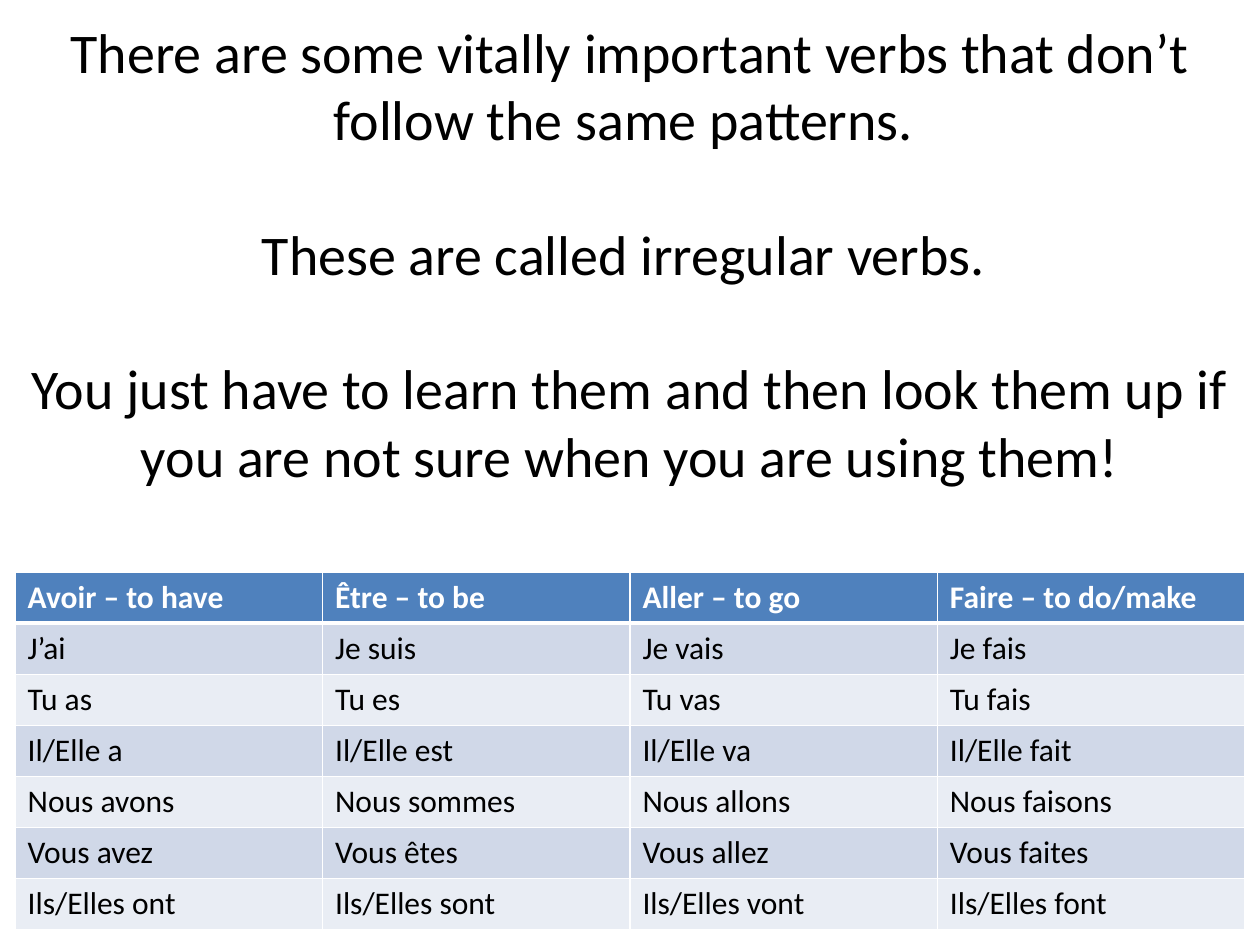
import pptx
import pptx.util
import pptx.dml.color
import pptx.enum.text
import pptx.oxml
import pptx.oxml.ns

WIDE, HIGH = 10, 7.5
LINE = 38.4
LINES = [
    "There are some vitally important verbs that don’t follow the same patterns. ",
    "These are called irregular verbs. ",
    "You just have to learn them and then look them up if you are not sure when you are using them!",
]
VERBS = {
    "Avoir – to have": ["J’ai", "Tu as", "Il/Elle a", "Nous avons", "Vous avez", "Ils/Elles ont"],
    "Être – to be": ["Je suis", "Tu es", "Il/Elle est", "Nous sommes", "Vous êtes", "Ils/Elles sont"],
    "Aller – to go": ["Je vais", "Tu vas", "Il/Elle va", "Nous allons", "Vous allez", "Ils/Elles vont"],
    "Faire – to do/make": ["Je fais", "Tu fais", "Il/Elle fait", "Nous faisons", "Vous faites", "Ils/Elles font"],
}
HEAD = {"fill": "4F81BD", "ink": "FFFFFF", "bold": True}
BANDS = [{"fill": "E9EDF4", "ink": "000000", "bold": False},
         {"fill": "D0D8E8", "ink": "000000", "bold": False}]


def tint(code):
    """Turn a hex string into a colour."""
    return pptx.dml.color.RGBColor.from_string(code)


def put(item, vals):
    """Set each named value on an item."""
    for name, val in vals.items():
        setattr(item, name, val)


def style(para, size, ink, bold=False):
    """Set the font of each run in a paragraph."""
    for run in para.runs:
        put(run.font, {"name": "Calibri", "size": pptx.util.Pt(size), "bold": bold})
        run.font.color.rgb = tint(ink)


def edge(cell, side, width):
    """Draw a white line on one side of a cell."""
    space = pptx.oxml.ns.nsdecls("a")
    line = pptx.oxml.parse_xml(
        f'<a:{side} {space} w="{pptx.util.Pt(width)}"><a:solidFill>'
        f'<a:srgbClr val="FFFFFF"/></a:solidFill></a:{side}>')
    cell._tc.get_or_add_tcPr().append(line)


def add_text(slide):
    """Add the centred message above the table."""
    box = slide.shapes.add_textbox(*map(pptx.util.Inches, (0, 1.47, WIDE, 1.61)))
    frame = box.text_frame
    put(frame, {"word_wrap": True, "text": "\n".join(LINES),
                "vertical_anchor": pptx.enum.text.MSO_ANCHOR.MIDDLE,
                "margin_bottom": pptx.util.Pt(LINE + 3.6)})
    for row, para in enumerate(frame.paragraphs):
        put(para, {"alignment": pptx.enum.text.PP_ALIGN.CENTER,
                   "line_spacing": pptx.util.Pt(LINE),
                   "space_before": pptx.util.Pt(LINE if row else 0)})
        style(para, 32, "000000")


def add_verbs(slide):
    """Add the table with one verb in each column."""
    rows = list(zip(*([verb, *forms] for verb, forms in VERBS.items())))
    left, top, high = 0.12, 4.54, 2.84
    place = map(pptx.util.Inches, (left, top, WIDE - 2 * left, high))
    table = slide.shapes.add_table(len(rows), len(VERBS), *place).table
    for r, row in enumerate(rows):
        look = BANDS[r % 2] if r else HEAD
        for c, text in enumerate(row):
            cell = table.cell(r, c)
            cell.text = text
            style(cell.text_frame.paragraphs[0], 18, look["ink"], look["bold"])
            for side in ("lnL", "lnR", "lnT", "lnB"):
                thick = (r, side) in ((0, "lnB"), (1, "lnT"))
                edge(cell, side, 3 if thick else 1)
            cell.fill.solid()
            cell.fill.fore_color.rgb = tint(look["fill"])


def main():
    """Build and save the slide."""
    deck = pptx.Presentation()
    put(deck, {"slide_width": pptx.util.Inches(WIDE), "slide_height": pptx.util.Inches(HIGH)})
    slide = deck.slides.add_slide(deck.slide_layouts[6])
    add_text(slide)
    add_verbs(slide)
    deck.save("out.pptx")


if __name__ == "__main__":
    main()
